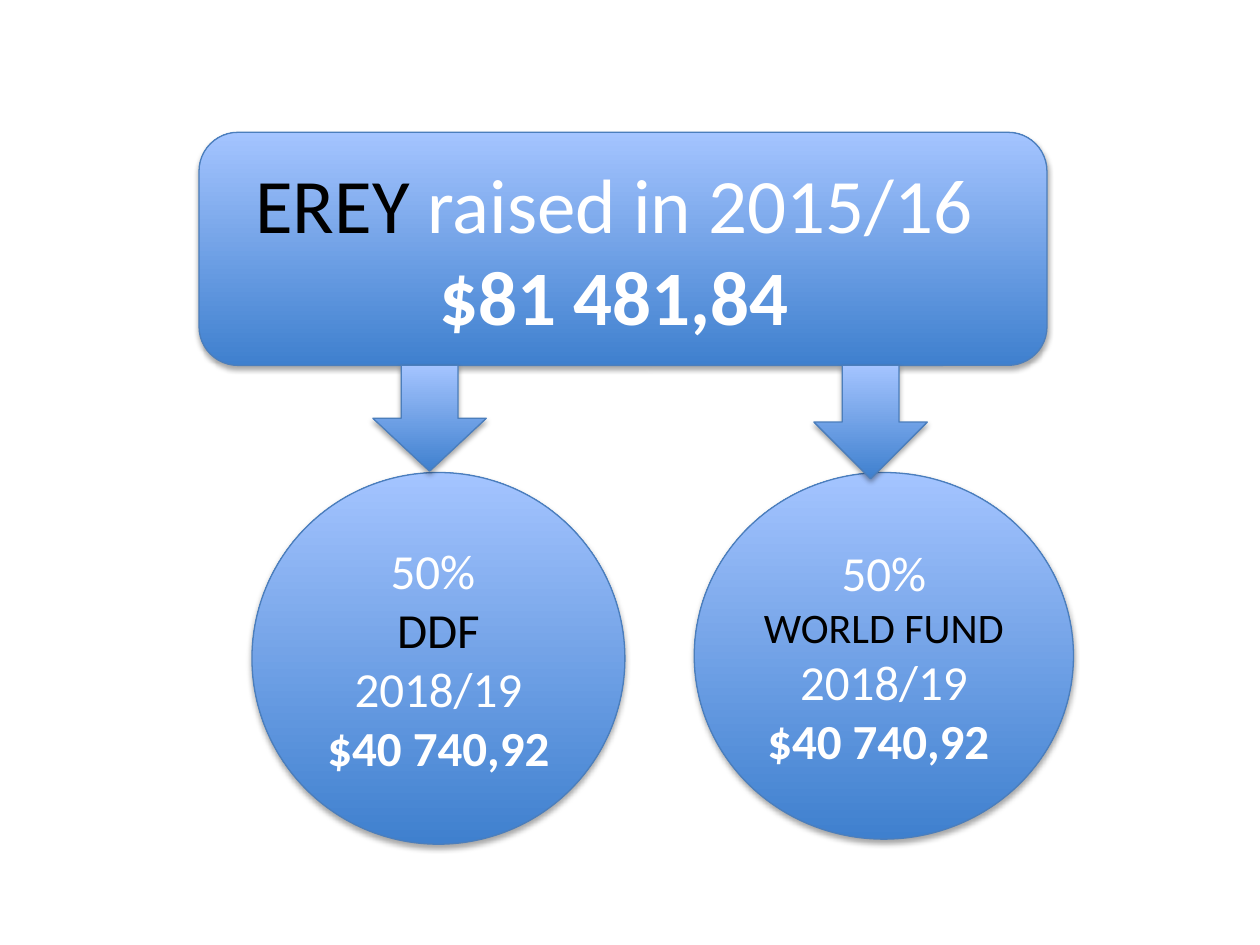
from lxml.etree import SubElement
from pptx import Presentation
from pptx.dml.color import RGBColor
from pptx.enum.shapes import MSO_SHAPE
from pptx.enum.text import MSO_ANCHOR, PP_ALIGN
from pptx.oxml.ns import qn
from pptx.util import Inches, Pt

COLORS = {"dark": "3F80CE", "light": "A4C4FF", "outline": "4B7EBC",
          "black": "000000", "white": "FFFFFF"}
BLACK = {"color": "black"}
BOLD = {"bold": True}

TOTAL = [
    [("EREY", BLACK), (" raised in 2015/16 ", {})],
    [("$81 481,84 ", BOLD)],
]
DDF = [
    [("50% ", {})],
    [("DDF", BLACK)],
    [("2018/19", {})],
    [("$40 740,92", BOLD)],
]
WORLD_FUND = [
    [("50%", {})],
    [("WORLD FUND", {"color": "black", "size": 24})],
    [("2018/19", {})],
    [("$40 740,92 ", BOLD)],
]

TOTAL_BOX = (1.58, 1.05, 6.73, 1.85)
ARROW_TOP = TOTAL_BOX[1] + TOTAL_BOX[3]
ARROW_WIDTH = 0.9
CIRCLE_TOP = 3.75
FUNDS = [
    {"lines": DDF, "left": 2, "width": 2.96, "height": 2.95,
     "arrow_left": 2.96, "arrow_height": 0.84},
    {"lines": WORLD_FUND, "left": 5.51, "width": 3.01, "height": 2.91,
     "arrow_left": 6.46, "arrow_height": 0.9},
]


def rgb(name):
    return RGBColor.from_string(COLORS[name])


def add_shadow(shape):
    shape.shadow.inherit = False
    effects = shape._element.spPr.find(qn("a:effectLst"))
    shadow = SubElement(effects, qn("a:outerShdw"), blurRad=str(Pt(3.1)),
                        dist=str(Pt(1.8)), dir="5400000", rotWithShape="0")
    color = SubElement(shadow, qn("a:srgbClr"), val=COLORS["black"])
    SubElement(color, qn("a:alpha"), val="35000")


def add_block(slide, kind, box):
    shape = slide.shapes.add_shape(kind, *map(Inches, box))
    shape.fill.gradient()
    shape.fill.gradient_angle = 90
    for stop, name in zip(shape.fill.gradient_stops, ("dark", "light")):
        stop.color.rgb = rgb(name)
    shape.line.color.rgb = rgb("outline")
    shape.line.width = Pt(0.75)
    add_shadow(shape)
    return shape


def add_run(paragraph, text, size, color="white", bold=False):
    run = paragraph.add_run()
    run.text = text
    run.font.name = "Calibri"
    run.font.size = Pt(size)
    run.font.bold = bold
    run.font.color.rgb = rgb(color)


def write_lines(shape, lines, size):
    frame = shape.text_frame
    frame.word_wrap = True
    frame.vertical_anchor = MSO_ANCHOR.MIDDLE
    for index, runs in enumerate(lines):
        paragraph = frame.add_paragraph() if index else frame.paragraphs[0]
        paragraph.alignment = PP_ALIGN.CENTER
        for text, style in runs:
            add_run(paragraph, text, **{"size": size, **style})


def main():
    """Build the slide that splits the money raised between two funds."""
    presentation = Presentation()
    presentation.slide_width = Inches(10)
    presentation.slide_height = Inches(7.5)
    slide = presentation.slides.add_slide(presentation.slide_layouts[6])

    total = add_block(slide, MSO_SHAPE.ROUNDED_RECTANGLE, TOTAL_BOX)
    write_lines(total, TOTAL, size=44)
    for fund in FUNDS:
        box = (fund["left"], CIRCLE_TOP, fund["width"], fund["height"])
        circle = add_block(slide, MSO_SHAPE.OVAL, box)
        write_lines(circle, fund["lines"], size=28)
    for fund in FUNDS:
        box = (fund["arrow_left"], ARROW_TOP, ARROW_WIDTH, fund["arrow_height"])
        add_block(slide, MSO_SHAPE.DOWN_ARROW, box)

    presentation.save("out.pptx")


if __name__ == "__main__":
    main()
